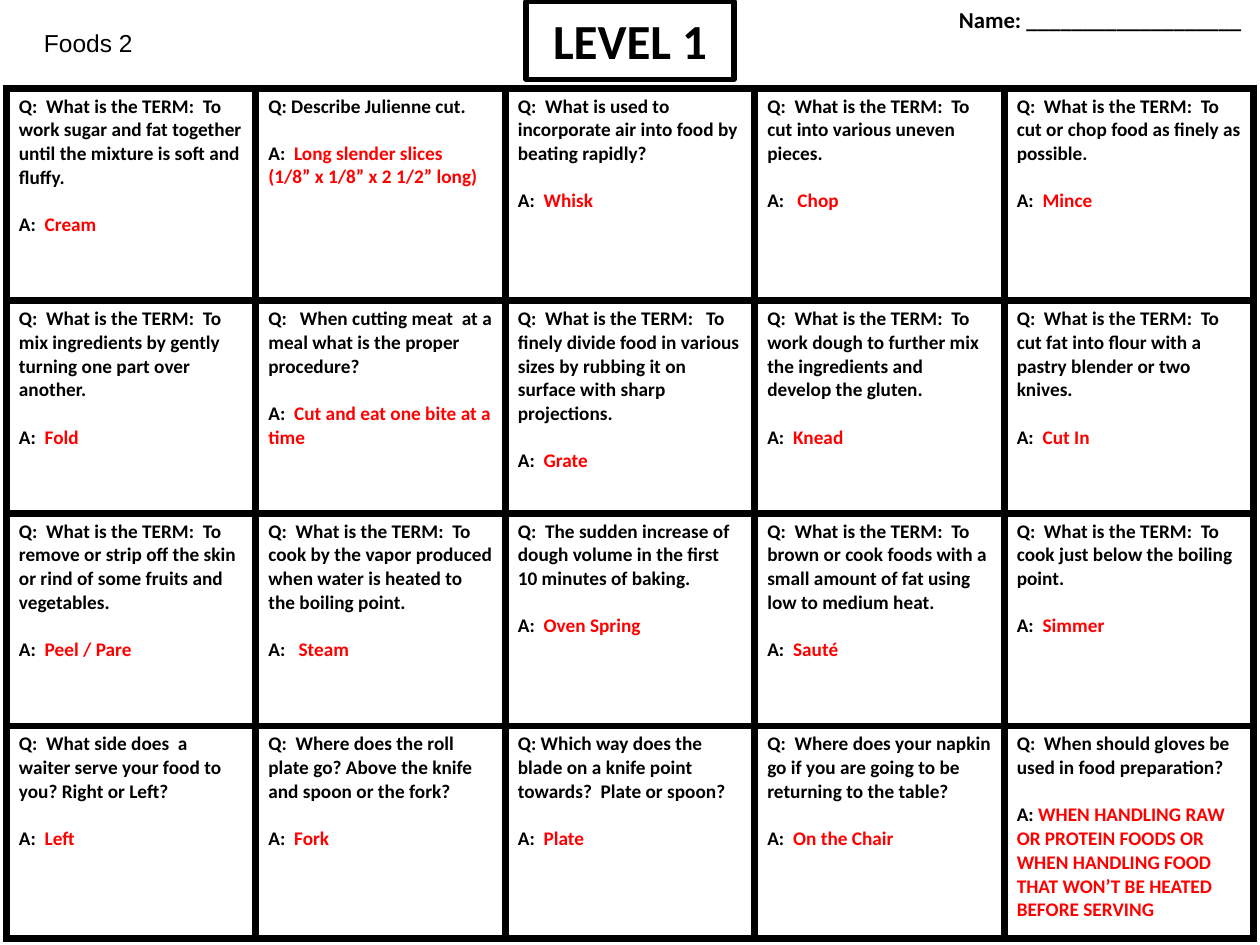
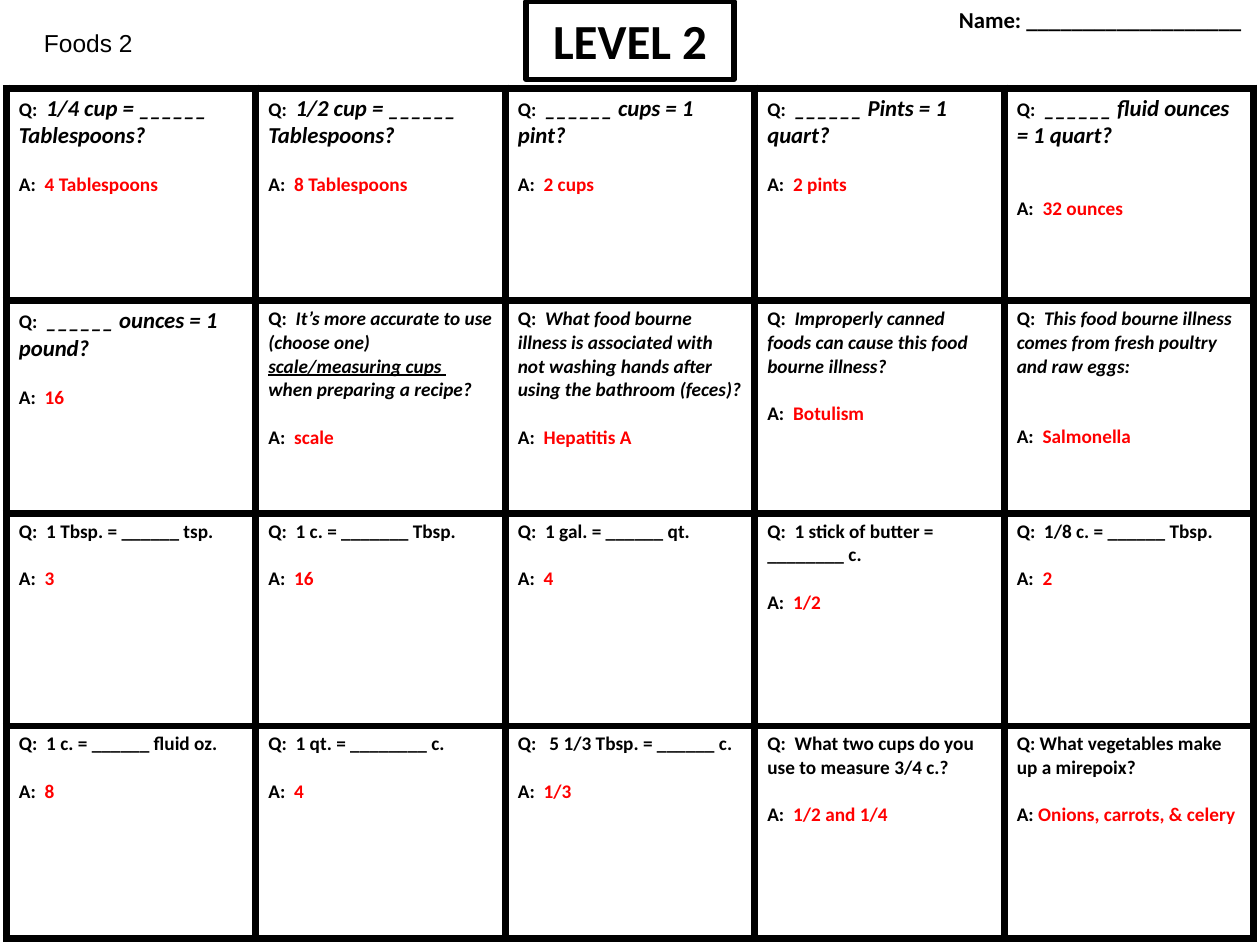
from dataclasses import dataclass
from lxml import etree
from pptx import Presentation, util as u
from pptx.dml import color
from pptx.enum import shapes, text
from pptx.oxml import ns


@dataclass(frozen=True)
class Theme:
    ink = color.RGBColor(0, 0, 0)
    answer = color.RGBColor(255, 0, 0)
    font = "Calibri"
    course_font = "Arial"
    title = 28
    course = 14
    name = 13
    body = 11
    large = 13
    blank_line = 13.4
    title_line = 3
    grid_line = 4.5


theme = Theme()
LOOKS = {"plain": (theme.body, False), "italic": (theme.body, True), "large": (theme.large, True)}


def add_run(p, words, size, rgb=theme.ink, font=theme.font, bold=True, italic=False, underline=False):
    r = p.add_run()
    r.text = words
    r.font.size = u.Pt(size)
    r.font.name = font
    r.font.color.rgb = rgb
    r.font.bold = bold
    r.font.italic = italic
    r.font.underline = underline


def add_entry(tf, p, entry, size, rgb, italic, gap):
    for i, line in enumerate(entry.split("\n")):
        if i:
            p = tf.add_paragraph()
        else:
            p.space_before = u.Pt(gap)
            body = line.partition(":")[2].lstrip()
            add_run(p, line[:len(line) - len(body)], theme.body)
            line = body
        for j, part in enumerate(line.split("|")):
            if part:
                add_run(p, part, size, rgb, italic=italic, underline=j % 2 == 1)


LEVELS = {
    "LEVEL 1": [
        [
            ("Q:  What is the TERM:  To work sugar and fat together until the mixture is soft and fluffy.",
             "A:  Cream", "plain"),
            ("Q: Describe Julienne cut.",
             "A:  Long slender slices\n(1/8” x 1/8” x 2 1/2” long)", "plain"),
            ("Q:  What is used to incorporate air into food by beating rapidly?", "A:  Whisk", "plain"),
            ("Q:  What is the TERM:  To cut into various uneven pieces.", "A:   Chop", "plain"),
            ("Q:  What is the TERM:  To cut or chop food as finely as possible.", "A:  Mince", "plain"),
        ],
        [
            ("Q:  What is the TERM:  To mix ingredients by gently turning one part over another.",
             "A:  Fold", "plain"),
            ("Q:   When cutting meat  at a meal what is the proper procedure?",
             "A:  Cut and eat one bite at a time", "plain"),
            ("Q:  What is the TERM:   To finely divide food in various sizes by rubbing it on surface "
             "with sharp projections.", "A:  Grate", "plain"),
            ("Q:  What is the TERM:  To work dough to further mix the ingredients and develop the gluten.",
             "A:  Knead", "plain"),
            ("Q:  What is the TERM:  To cut fat into flour with a pastry blender or two knives.",
             "A:  Cut In", "plain"),
        ],
        [
            ("Q:  What is the TERM:  To remove or strip off the skin or rind of some fruits and vegetables.",
             "A:  Peel / Pare", "plain"),
            ("Q:  What is the TERM:  To cook by the vapor produced when water is heated to the boiling point.",
             "A:   Steam", "plain"),
            ("Q:  The sudden increase of  dough volume in the first 10 minutes of baking.",
             "A:  Oven Spring", "plain"),
            ("Q:  What is the TERM:  To brown or cook foods with a small amount of fat using "
             "low to medium heat.", "A:  Sauté", "plain"),
            ("Q:  What is the TERM:  To cook just below the boiling point.", "A:  Simmer", "plain"),
        ],
        [
            ("Q:  What side does  a waiter serve your food to you? Right or Left?", "A:  Left", "plain"),
            ("Q:  Where does the roll plate go? Above the knife and spoon or the fork?",
             "A:  Fork", "plain"),
            ("Q: Which way does the blade on a knife point towards?  Plate or spoon?",
             "A:  Plate", "plain"),
            ("Q:  Where does your napkin go if you are going to be returning to the table?",
             "A:  On the Chair", "plain"),
            ("Q:  When should gloves be used in food preparation?",
             "A: WHEN HANDLING RAW OR PROTEIN FOODS OR WHEN HANDLING FOOD THAT WON’T BE HEATED "
             "BEFORE SERVING", "plain"),
        ],
    ],
    "LEVEL 2": [
        [
            ("Q:  1/4 cup = ______ Tablespoons?", "A:  4 Tablespoons", "large"),
            ("Q:  1/2 cup = ______ Tablespoons?", "A:  8 Tablespoons", "large"),
            ("Q:  ______ cups = 1 pint?", "A:  2 cups", "large"),
            ("Q:  ______ Pints = 1 quart?", "A:  2 pints", "large"),
            ("Q:  ______ fluid ounces = 1 quart?", "\nA:  32 ounces", "large"),
        ],
        [
            ("Q:  ______ ounces = 1 pound?", "A:  16", "large"),
            ("Q:  It’s more accurate to use (choose one) |scale/measuring cups |\nwhen preparing a recipe?",
             "A:  scale", "italic"),
            ("Q:  What food bourne illness is associated with not washing hands after using "
             "the bathroom (feces)?", "A:  Hepatitis A", "italic"),
            ("Q:  Improperly canned foods can cause this food bourne illness?", "A:  Botulism", "italic"),
            ("Q:  This food bourne illness comes from fresh poultry and raw eggs:",
             "\nA:  Salmonella", "italic"),
        ],
        [
            ("Q:  1 Tbsp. = ______ tsp.", "A:  3", "plain"),
            ("Q:  1 c. = _______ Tbsp.", "A:  16", "plain"),
            ("Q:  1 gal. = ______ qt.", "A:  4", "plain"),
            ("Q:  1 stick of butter = ________ c.", "A:  1/2", "plain"),
            ("Q:  1/8 c. = ______ Tbsp.", "A:  2", "plain"),
        ],
        [
            ("Q:  1 c. = ______ fluid oz.", "A:  8", "plain"),
            ("Q:  1 qt. = ________ c.", "A:  4", "plain"),
            ("Q:   5 1/3 Tbsp. = ______ c.", "A:  1/3", "plain"),
            ("Q:  What two cups do you use to measure 3/4 c.?", "A:  1/2 and 1/4", "plain"),
            ("Q: What vegetables make up a mirepoix?", "A: Onions, carrots, & celery", "plain"),
        ],
    ],
}

prs = Presentation()
prs.slide_width, prs.slide_height = u.Inches(10), u.Inches(7.5)
W, H = prs.slide_width, prs.slide_height
margin = u.Inches(0.05)
header = u.Inches(0.7)

for level, rows in LEVELS.items():
    s = prs.slides.add_slide(prs.slide_layouts[6])

    sp = s.shapes.add_textbox(int(W * 0.025), u.Inches(0.17), int(W / 6), u.Inches(0.34))
    sp.text_frame.word_wrap = True
    add_run(sp.text_frame.paragraphs[0], "Foods 2", theme.course, font=theme.course_font, bold=False)

    title_w = int(W * 0.165)
    sp = s.shapes.add_shape(shapes.MSO_SHAPE.RECTANGLE, (W - title_w) // 2, u.Inches(0.01),
                            title_w, u.Inches(0.62))
    sp.shadow.inherit = False
    sp.fill.background()
    sp.line.color.rgb = theme.ink
    sp.line.width = u.Pt(theme.title_line)
    tf = sp.text_frame
    tf.vertical_anchor = text.MSO_ANCHOR.MIDDLE
    p = tf.paragraphs[0]
    p.alignment = text.PP_ALIGN.CENTER
    add_run(p, level, theme.title)

    name_w = int(W * 0.254)
    sp = s.shapes.add_textbox(W - name_w, 0, name_w, u.Inches(0.36))
    sp.text_frame.word_wrap = True
    p = sp.text_frame.paragraphs[0]
    p.alignment = text.PP_ALIGN.CENTER
    add_run(p, "Name: ___________________", theme.name)

    table = s.shapes.add_table(len(rows), len(rows[0]), margin, header,
                               W - 2 * margin, H - header - margin).table
    table.first_row = table.horz_banding = False
    for i, row in enumerate(rows):
        for j, (question, answer, look) in enumerate(row):
            cell = table.cell(i, j)
            tcPr = cell._tc.get_or_add_tcPr()
            for side in ("a:lnL", "a:lnR", "a:lnT", "a:lnB"):
                ln = etree.SubElement(tcPr, ns.qn(side), w=str(u.Pt(theme.grid_line)))
                fill = etree.SubElement(ln, ns.qn("a:solidFill"))
                etree.SubElement(fill, ns.qn("a:srgbClr"), val=str(theme.ink))
            cell.fill.background()
            tf = cell.text_frame
            size, italic = LOOKS[look]
            add_entry(tf, tf.paragraphs[0], question, size, theme.ink, italic, 0)
            reply = answer.lstrip("\n")
            gap = theme.blank_line * (1 + len(answer) - len(reply))
            add_entry(tf, tf.add_paragraph(), reply, theme.body, theme.answer, False, gap)

prs.save("out.pptx")
